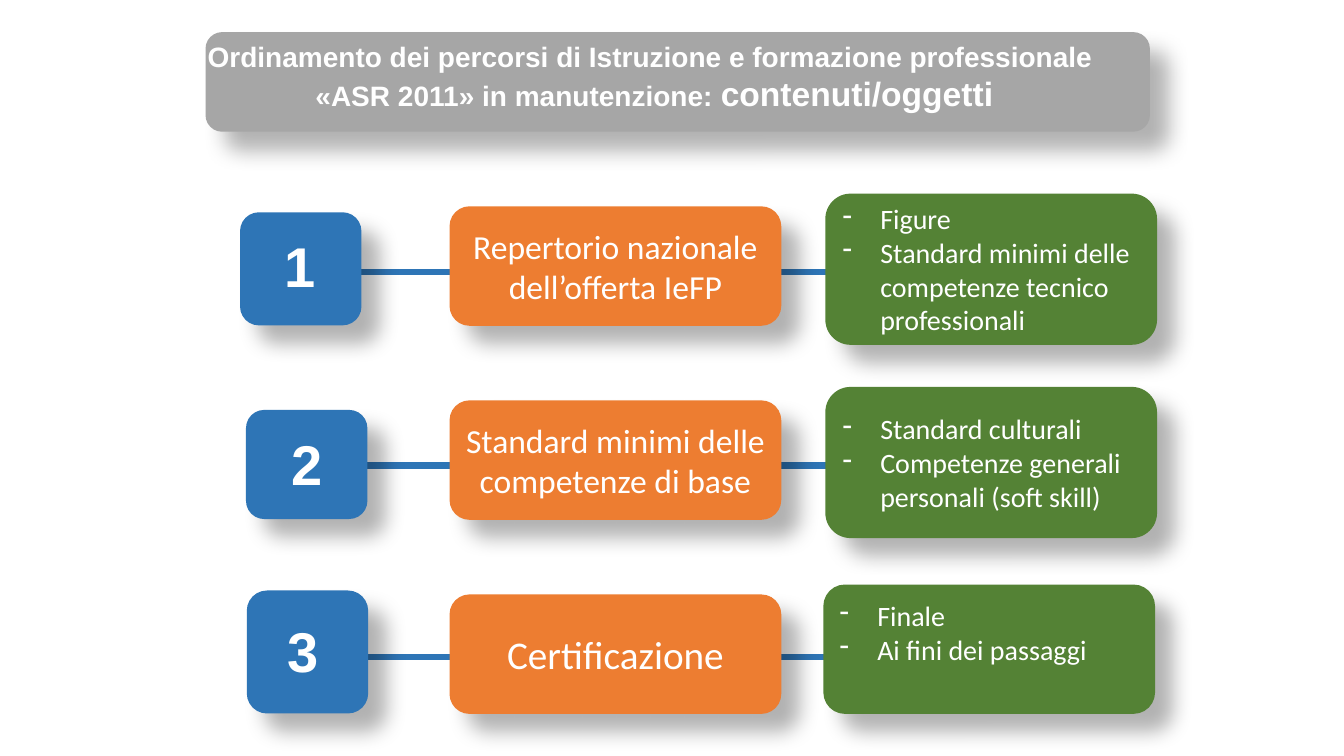
from lxml.etree import SubElement
from pptx import Presentation
from pptx.dml.color import RGBColor
from pptx.enum.shapes import MSO_CONNECTOR, MSO_SHAPE
from pptx.enum.text import MSO_ANCHOR, MSO_AUTO_SIZE, PP_ALIGN
from pptx.oxml.ns import qn
from pptx.util import Cm, Pt

# Content
TITLE = [
    [("Ordinamento dei percorsi di Istruzione e formazione professionale", 20)],
    [("«ASR 2011» in manutenzione: ", 20), ("contenuti/oggetti", 24)],
]
# Places in cm: number box (left, top, height), digit (left, top),
# topic top, detail box (left, top, height, bottom inset), link y and right link start
ROWS = [
    dict(number="1", topic=["Repertorio nazionale", "dell’offerta IeFP"], topic_size=24,
         details=["Figure", "Standard minimi delle competenze tecnico professionali"],
         box=(6.05, 5.35, 2.85), digit=(6.93, 5.72), topic_top=5.2,
         detail_box=(20.8, 4.88, 3.81, 0.13), link_y=6.86, link_x=18.82),
    dict(number="2", topic=["Standard minimi delle competenze di base"], topic_size=24,
         details=["Standard culturali", "Competenze generali personali (soft skill)"],
         box=(6.2, 10.33, 2.75), digit=(7.09, 10.69), topic_top=10.09,
         detail_box=(20.8, 9.75, 3.81, 0.13), link_y=11.73, link_x=18.82),
    dict(number="3", topic=["Certificazione"], topic_size=28,
         details=["Finale", "Ai fini dei passaggi"],
         box=(6.22, 14.88, 3.1), digit=(6.99, 15.42), topic_top=14.98,
         detail_box=(20.75, 14.73, 3.26, 0.99), link_y=16.56, link_x=18.54),
]

BLUE = RGBColor(0x2E, 0x75, 0xB6)
ORANGE = RGBColor(0xED, 0x7D, 0x31)
GREEN = RGBColor(0x54, 0x82, 0x35)
GREY = RGBColor(0xA6, 0xA6, 0xA6)
WHITE = RGBColor(0xFF, 0xFF, 0xFF)

NUMBER_W = 3.06
TOPIC_X, TOPIC_H = 11.33, 3.01
CARD_W = 8.36
LEFT_LINK_X, LINK_W = 8.81, 3.15
HANGING = Cm(0.95)

prs = Presentation()
prs.slide_width, prs.slide_height = Cm(33.87), Cm(19.05)
s = prs.slides.add_slide(prs.slide_layouts[6])


def add_link(x, y):
    line = s.shapes.add_connector(MSO_CONNECTOR.STRAIGHT, Cm(x), Cm(y), Cm(x + LINK_W), Cm(y))
    line.line.color.rgb = BLUE
    line.line.width = Pt(4.5)
    SubElement(line._element.spPr, qn("a:effectLst"))


def add_card(x, y, w, h, color):
    sp = s.shapes.add_shape(MSO_SHAPE.ROUNDED_RECTANGLE, Cm(x), Cm(y), Cm(w), Cm(h))
    sp.fill.solid()
    sp.fill.fore_color.rgb = color
    sp.line.fill.background()
    sp.shadow.inherit = False
    effects = sp._element.spPr.find(qn("a:effectLst"))
    shadow = SubElement(effects, qn("a:outerShdw"), blurRad=str(Pt(15)), dist=str(Pt(18)),
                        dir="2700000", algn="ctr", rotWithShape="0")
    black = SubElement(shadow, qn("a:srgbClr"), val="000000")
    SubElement(black, qn("a:alpha"), val="30000")
    tf = sp.text_frame
    tf.word_wrap = True
    tf.vertical_anchor = MSO_ANCHOR.MIDDLE
    return tf


def add_text_box(x, y, w, h, wrap):
    tf = s.shapes.add_textbox(Cm(x), Cm(y), Cm(w), Cm(h)).text_frame
    tf.word_wrap = wrap
    tf.auto_size = MSO_AUTO_SIZE.SHAPE_TO_FIT_TEXT
    return tf


def write(tf, lines, font, align, bold=False):
    """Fill a text frame; each line is a list of (text, size) runs."""
    for i, runs in enumerate(lines):
        p = tf.add_paragraph() if i else tf.paragraphs[0]
        p.alignment = align
        for text, size in runs:
            r = p.add_run()
            r.text = text
            r.font.name = font
            r.font.size = Pt(size)
            r.font.bold = bold
            r.font.color.rgb = WHITE


def add_dashes(tf):
    for p in tf.paragraphs:
        pPr = p._p.get_or_add_pPr()
        pPr.set("marL", str(HANGING))
        pPr.set("indent", str(-HANGING))
        SubElement(pPr, qn("a:buFontTx"))
        SubElement(pPr, qn("a:buChar"), char="-")


# Links lie behind the cards
for row in ROWS:
    for x in (LEFT_LINK_X, row["link_x"]):
        add_link(x, row["link_y"])

# Title
add_card(5.18, 0.81, 23.8, 2.51, GREY)
tf = add_text_box(4.24, 0.86, 24.3, 2.13, True)
write(tf, TITLE, "Arial", PP_ALIGN.CENTER, bold=True)
tf.paragraphs[1]._p.get_or_add_pPr().set("marL", str(Cm(0.2)))

# Rows: number, topic, details
for row in ROWS:
    x, y, h = row["box"]
    add_card(x, y, NUMBER_W, h, BLUE)
    tf = add_text_box(*row["digit"], 1.3, 1.96, False)
    write(tf, [[(row["number"], 40)]], "Arial", PP_ALIGN.LEFT, bold=True)

    tf = add_card(TOPIC_X, row["topic_top"], CARD_W, TOPIC_H, ORANGE)
    write(tf, [[(t, row["topic_size"])] for t in row["topic"]], "Calibri", PP_ALIGN.CENTER)

    x, y, h, inset = row["detail_box"]
    tf = add_card(x, y, CARD_W, h, GREEN)
    tf.margin_bottom = Cm(inset)
    write(tf, [[(t, 20)] for t in row["details"]], "Calibri", PP_ALIGN.LEFT)
    add_dashes(tf)

prs.save("out.pptx")
